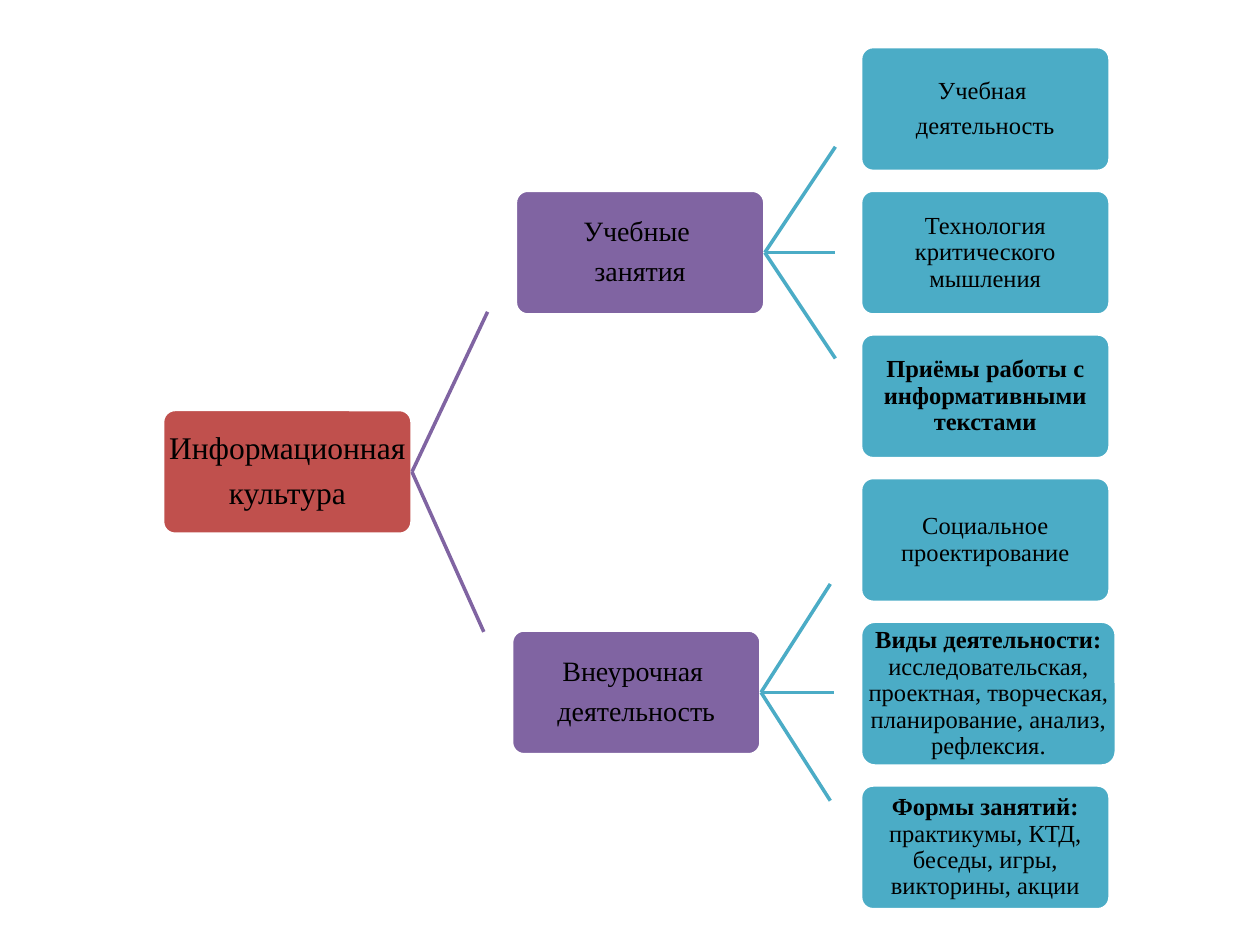
"""Build a slide with a three-level tree of information culture topics."""
from lxml import etree
from pptx import Presentation
from pptx import util as u
from pptx.dml.color import RGBColor
from pptx.enum import shapes, text
from pptx.oxml.ns import qn

COLORS = {"root": "C0504D", "branch": "8064A2", "leaf": "4BACC6",
          "edge": "FFFFFF", "ink": "000000"}
SIZES = {"root": 18, "branch": 16, "leaf": 14}
WIDTH, HEIGHT, GAP = 1.98, 0.99, 0.15
LEAF_LEFT, LEAF_TOP = 6.83, 0.37

ROOT = [["Информационная "], ["культура"]]
BRANCHES = [
    {"at": (4.09, 1.51), "text": [["Учебные "], ["занятия"]],
     "link": (0.6, -1.27), "reach": (0.56, 0.56), "rise": 0.84,
     "leaves": [
         {"text": [["Учебная "], ["деятельность"]]},
         {"text": [["Технология критического мышления"]]},
         {"text": [["Приёмы работы с информативными текстами"]], "bold": True}]},
    {"at": (4.06, 5), "text": [["Внеурочная "], ["деятельность"]],
     "link": (0.57, 1.27), "reach": (0.55, 0.58), "rise": 0.86,
     "leaves": [
         {"text": [["Социальное проектирование"]]},
         {"text": [["Виды деятельности: ", "исследовательская, проектная, "
                    "творческая, планирование, анализ, рефлексия."]],
          "bold": True, "size": (2.03, 1.15)},
         {"text": [["Формы занятий:", " практикумы, КТД, беседы, игры, "
                    "викторины, акции"]], "bold": True}]},
]


class TreeSlide:
    """Holds the style and the current slide."""

    def __init__(self, prs):
        self.s = prs.slides.add_slide(prs.slide_layouts[6])

    def color(self, name):
        """Return a named colour."""
        return RGBColor.from_string(COLORS[name])

    def node(self, level, at, paragraphs, size=(WIDTH, HEIGHT), bold=False):
        """Add a rounded box; bold applies to the first run of a paragraph."""
        sp = self.s.shapes.add_shape(shapes.MSO_SHAPE.ROUNDED_RECTANGLE,
                                     *map(u.Inches, at + size))
        sp.adjustments[0] = 0.1
        sp.shadow.inherit = False
        sp.fill.solid()
        sp.fill.fore_color.rgb = self.color(level)
        sp.line.color.rgb = self.color("edge")
        sp.line.width = u.Pt(2)
        tf = sp.text_frame
        frame = {"word_wrap": True, "vertical_anchor": text.MSO_ANCHOR.MIDDLE}
        frame.update({f"margin_{side}": u.Inches(0.01)
                      for side in ("left", "top", "right", "bottom")})
        self.apply(tf, frame)
        for i, runs in enumerate(paragraphs):
            p = tf.add_paragraph() if i else tf.paragraphs[0]
            self.apply(p, {"alignment": text.PP_ALIGN.CENTER, "line_spacing": 0.9,
                           "space_after": u.Pt(0.35 * SIZES[level])})
            for j, words in enumerate(runs):
                r = p.add_run()
                r.text = words
                self.apply(r.font, {"name": "Times New Roman",
                                    "size": u.Pt(SIZES[level]),
                                    "bold": bold and j == 0})
                r.font.color.rgb = self.color("ink")
        return sp

    def link(self, parent, level, dx, dy):
        """Add a line from the middle of the parent's right side."""
        x = parent.left + parent.width
        y = parent.top + parent.height // 2
        cxn = self.s.shapes.add_connector(shapes.MSO_CONNECTOR.STRAIGHT, x, y,
                                          x + u.Inches(dx), y + u.Inches(dy))
        cxn.begin_connect(parent, 3)
        cxn.line.color.rgb = self.color(level)
        cxn.line.width = u.Pt(2)
        etree.SubElement(cxn._element.spPr, qn("a:effectLst"))

    def apply(self, target, values):
        """Set attributes from a dict of format values."""
        for name, value in values.items():
            setattr(target, name, value)


def main():
    """Build and save the slide."""
    prs = Presentation()
    prs.slide_width, prs.slide_height = u.Inches(10), u.Inches(7.5)
    tree = TreeSlide(prs)
    root = tree.node("root", (1.29, 3.25), ROOT)
    top = LEAF_TOP
    for branch in BRANCHES:
        tree.link(root, "branch", *branch["link"])
        parent = tree.node("branch", branch["at"], branch["text"])
        slanted, level = branch["reach"]
        for step, leaf in zip((-1, 0, 1), branch["leaves"]):
            tree.link(parent, "leaf", slanted if step else level,
                      step * branch["rise"])
            size = leaf.get("size", (WIDTH, HEIGHT))
            tree.node("leaf", (LEAF_LEFT, top), leaf["text"], size,
                      leaf.get("bold", False))
            top += size[1] + GAP
    prs.save("out.pptx")


if __name__ == "__main__":
    main()
